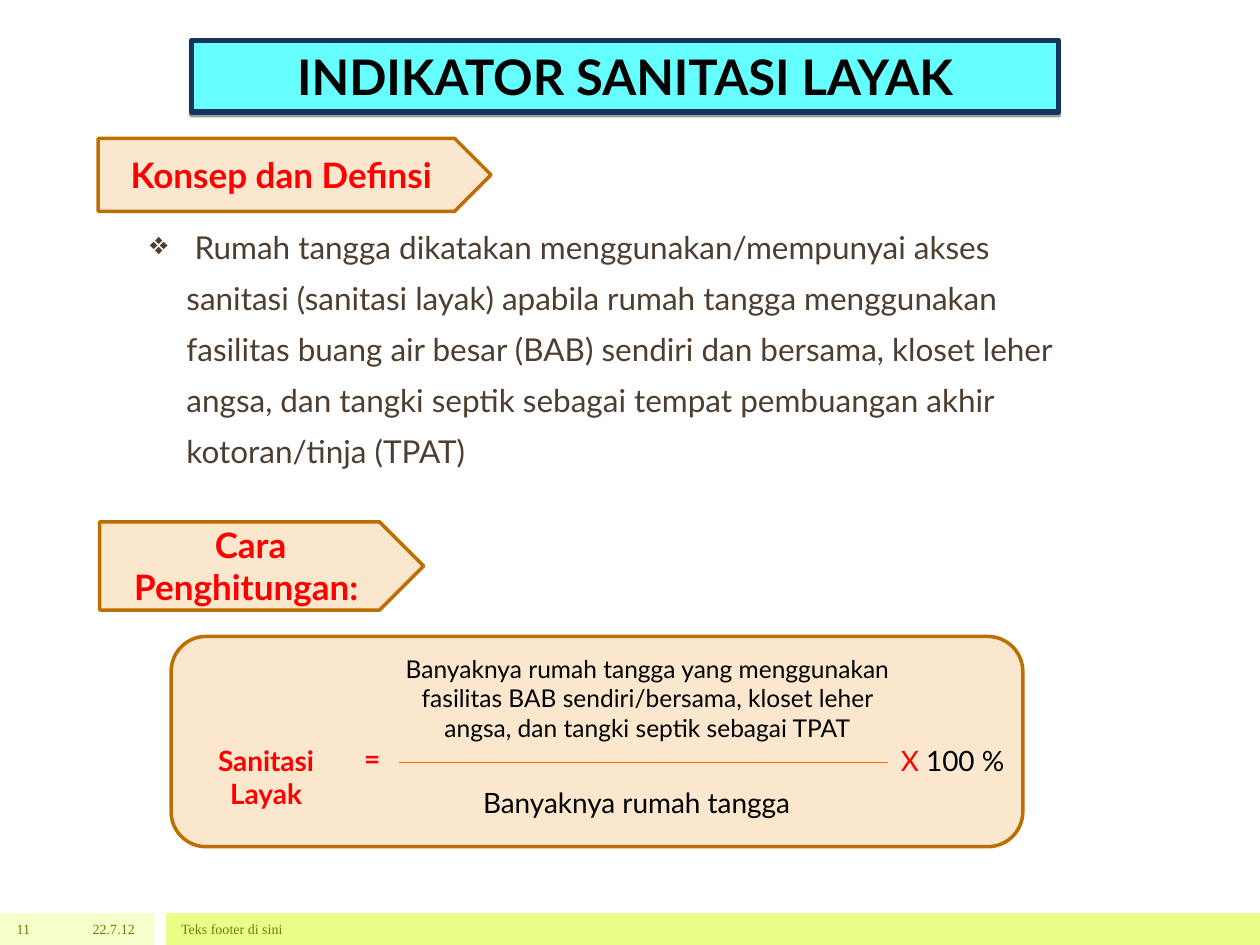
from lxml import etree
from pptx import Presentation
from pptx.dml.color import RGBColor
from pptx.enum.shapes import MSO_CONNECTOR, MSO_SHAPE
from pptx.enum.text import MSO_ANCHOR, PP_ALIGN
from pptx.oxml.ns import qn
from pptx.util import Cm, Pt

RECT, ROUND = MSO_SHAPE.RECTANGLE, MSO_SHAPE.ROUNDED_RECTANGLE
ARROW = MSO_SHAPE.PENTAGON
TOP, MID = MSO_ANCHOR.TOP, MSO_ANCHOR.MIDDLE
LEFT, CENTER, RIGHT = PP_ALIGN.LEFT, PP_ALIGN.CENTER, PP_ALIGN.RIGHT

RED, BLACK, BROWN, OLIVE = "FF0000", "000000", "4D3E2F", "688000"
CREAM, OCHRE = "FAE7CD", "BC6F00"

# Places are (left, top, width, height) in centimetres.
WIDE, HIGH, BAR = 25.4, 19.05, 0.64
FOOT = HIGH - BAR
BANDS = [(0, 3.12, "F6FFCC"), (3.35, 22.05, "E9FF88")]
NOTES = [
    ("22.7.12", 0.89, 2.08, RIGHT),
    ("Teks footer di sini", 3.4, 19.05, LEFT),
    ("11", 0, 0.86, RIGHT),
]
TITLE = "INDIKATOR SANITASI LAYAK", (3.86, 0.81, 17.48, 1.45)
HEADS = [
    ("Konsep dan Definsi ", (1.98, 2.79, 7.92, 1.47)),
    ("Cara Penghitungan: ", (2.01, 10.52, 6.53, 1.78)),
]
BODY = (
    " Rumah tangga dikatakan menggunakan/mempunyai akses sanitasi "
    "(sanitasi layak) apabila rumah tangga menggunakan fasilitas buang air "
    "besar (BAB) sendiri dan bersama, kloset leher angsa, dan tangki septik "
    "sebagai tempat pembuangan akhir kotoran/tinja (TPAT)"
)
PANEL = (3.45, 12.83, 17.17, 4.24)
ABOVE = (
    "Banyaknya rumah tangga yang menggunakan fasilitas BAB sendiri/bersama, "
    "kloset leher angsa, dan tangki septik sebagai TPAT"
)
RULE = (8.05, 17.91, 15.37)
TERMS = [
    ([(ABOVE, BLACK)], (7.52, 13.06, 11.07, 2.06), dict(size=14)),
    ([("Banyaknya rumah tangga", BLACK)], (7.59, 15.72, 10.49, 0.94), {}),
    ([("X ", RED), ("100 %", BLACK)], (17.91, 14.86, 2.74, 0.94), dict(align=LEFT)),
    ([("Sanitasi Layak", RED)], (3.61, 14.86, 3.51, 1.63), dict(bold=True)),
    ([("=", RED)], (7.11, 14.83, 0.48, 0.94), dict(bold=True, align=LEFT)),
]


def color(code):
    return RGBColor.from_string(code)


def draw(home, kind, place, fill, line=None, width=2):
    shape = home.add_shape(kind, *map(Cm, place))
    shape.shadow.inherit = False
    shape.fill.solid()
    shape.fill.fore_color.rgb = color(fill)
    if line:
        shape.line.color.rgb = color(line)
        shape.line.width = Pt(width)
    else:
        shape.line.fill.background()
    return shape


def write(shape, runs, size=16, font="Lato", bold=False, align=CENTER, anchor=TOP):
    """Put (text, colour) runs into the shape and return the paragraph."""
    frame = shape.text_frame
    frame.word_wrap = True
    frame.vertical_anchor = anchor
    para = frame.paragraphs[0]
    para.alignment = align
    for text, code in runs:
        run = para.add_run()
        run.text = text
        run.font.name = font
        run.font.size = Pt(size)
        run.font.bold = bold
        run.font.color.rgb = color(code)
    return para


def label(home, place, runs, **style):
    return write(home.add_textbox(*map(Cm, place)), runs, **style)


def shade(shape):
    """Cast a soft grey edge straight below the shape."""
    effects = shape._element.spPr.find(qn("a:effectLst"))
    drop = etree.SubElement(effects, qn("a:outerShdw"), blurRad="0",
                            dist=str(Pt(1.6)), dir="5400000", rotWithShape="0")
    tone = etree.SubElement(drop, qn("a:srgbClr"), val=BLACK)
    etree.SubElement(tone, qn("a:alpha"), val="38000")


def bullet(para, char, indent):
    props = para._p.get_or_add_pPr()
    props.set("marL", str(Cm(indent)))
    props.set("indent", str(-Cm(indent)))
    etree.SubElement(props, qn("a:buChar"), char=char)
    tabs = etree.SubElement(props, qn("a:tabLst"))
    etree.SubElement(tabs, qn("a:tab"), pos=str(Cm(indent)), algn="l")


def rule(home, start, end, y):
    line = home.add_connector(MSO_CONNECTOR.STRAIGHT, Cm(start), Cm(y), Cm(end), Cm(y))
    line.line.color.rgb = color("FF6600")
    line.line.width = Pt(0.75)
    etree.SubElement(line._element.spPr, qn("a:effectLst"))


def main():
    deck = Presentation()
    deck.slide_width, deck.slide_height = Cm(WIDE), Cm(HIGH)
    shapes = deck.slides.add_slide(deck.slide_layouts[6]).shapes

    for left, width, fill in BANDS:
        draw(shapes, RECT, (left, FOOT, width, BAR), fill)
    for text, left, width, align in NOTES:
        label(shapes, (left, FOOT, width, BAR), [(text, OLIVE)], size=8,
              font="Times New Roman", align=align, anchor=MID)

    text, place = TITLE
    title = draw(shapes, RECT, place, "66FFFF", "153659", 3)
    shade(title)
    write(title, [(text, BLACK)], size=28, bold=True)

    for text, place in HEADS:
        head = draw(shapes, ARROW, place, CREAM, OCHRE)
        write(head, [(text, RED)], size=20, bold=True, anchor=MID)

    body = label(shapes, (2.77, 4.47, 19.08, 4.88), [(BODY, BROWN)], size=18,
                 align=LEFT, anchor=MID)
    bullet(body, "❖", 0.74)
    body.line_spacing = 1.35

    group = shapes.add_group_shape().shapes
    draw(group, ROUND, PANEL, CREAM, OCHRE)
    for runs, place, style in TERMS:
        label(group, place, runs, **style)
    rule(group, *RULE)

    deck.save("out.pptx")


if __name__ == "__main__":
    main()
